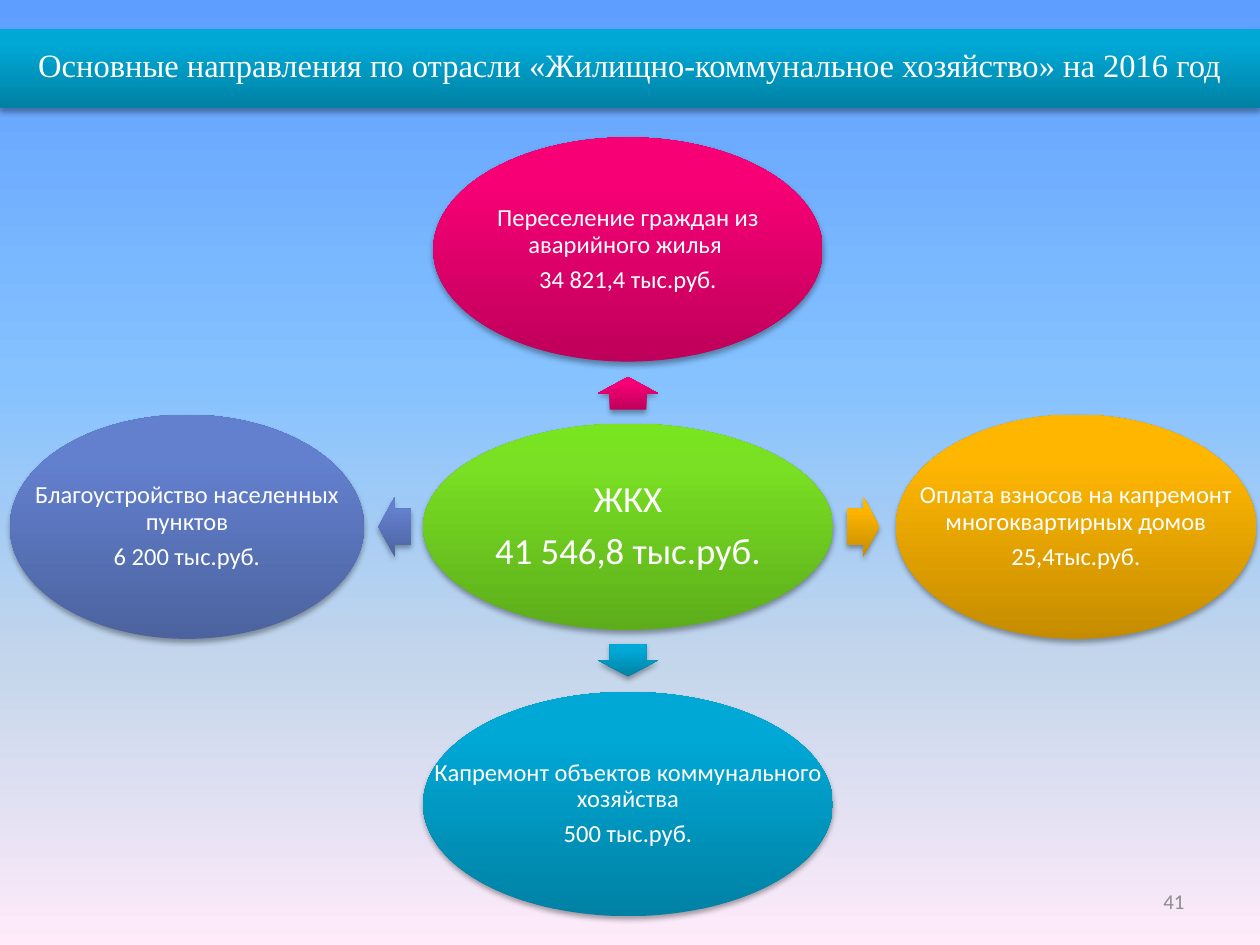
import pptx
import pptx.util
import pptx.dml.color
import pptx.enum.shapes
import pptx.enum.text
import pptx.oxml
import pptx.oxml.ns

Cm, Pt = pptx.util.Cm, pptx.util.Pt
SHAPE = pptx.enum.shapes.MSO_SHAPE
ALIGN = pptx.enum.text.PP_ALIGN
qn, nsdecls = pptx.oxml.ns.qn, pptx.oxml.ns.nsdecls

COLORS = {"white": "FFFFFF", "number": "8C8C8C"}
GRADIENTS = {
    "sky": [(0, "5E9EFF"), (40, "85C2FF"), (70, "C4D6EB"), (100, "FFEBFA")],
    "green": [(0, "5DAD1B"), (80, "79E023"), (100, "79E520")],
    "pink": [(0, "BE005A"), (80, "F70075"), (100, "F80076")],
    "amber": [(0, "C58C00"), (80, "FFB601"), (100, "FFB602")],
    "teal": [(0, "0081A4"), (80, "00A8D5"), (100, "00A8D6")],
    "indigo": [(0, "4C639F"), (80, "6380CE"), (100, "6180D1")],
}
SLIDE_W, SLIDE_H = 25.4, 19.05
HUB_X, HUB_Y = 12.66, 10.62

# text, gradient, ellipse width, centre offset, arrow offset, arrow rotation
BRANCHES = [
    (["Переселение граждан из аварийного жилья ", "34 821,4 тыс.руб."],
     "pink", 7.85, (0, -5.59), (0, -2.69), 270),
    (["Оплата взносов на капремонт многоквартирных домов", "25,4тыс.руб."],
     "amber", 7.26, (9.03, 0), (4.74, 0), 0),
    (["Капремонт объектов коммунального хозяйства", "500 тыс.руб."],
     "teal", 8.26, (0, 5.59), (0, 2.69), 90),
    (["Благоустройство населенных пунктов", "6 200 тыс.руб."],
     "indigo", 7.14, (-8.89, 0), (-4.7, 0), 180),
]


class Deck:
    def __init__(self):
        self.prs = pptx.Presentation()
        self.prs.slide_width, self.prs.slide_height = Cm(SLIDE_W), Cm(SLIDE_H)
        self.s = self.prs.slides.add_slide(self.prs.slide_layouts[6])

    def gradient(self, holder, name, angle):
        """Replace the solid fill inside holder with a named linear gradient."""
        stops = "".join(f'<a:gs pos="{pos * 1000}"><a:srgbClr val="{color}"/></a:gs>'
                        for pos, color in GRADIENTS[name])
        grad = pptx.oxml.parse_xml(
            f'<a:gradFill {nsdecls("a")} rotWithShape="0"><a:gsLst>{stops}</a:gsLst>'
            f'<a:lin ang="{angle * 60000}" scaled="0"/></a:gradFill>')
        solid = holder.find(qn("a:solidFill"))
        holder.replace(solid, grad)

    def background(self, name):
        self.s.background.fill.solid()
        self.gradient(self.s.element.find(".//" + qn("p:bgPr")), name, 90)

    def shape(self, kind, x, y, w, h, name, rotation=0):
        """Add a shaded shape centred on x, y."""
        sp = self.s.shapes.add_shape(kind, Cm(x - w / 2), Cm(y - h / 2), Cm(w), Cm(h))
        sp.rotation = rotation
        sp.line.fill.background()
        sp.fill.solid()
        sp_pr = sp.element.spPr
        self.gradient(sp_pr, name, 270)
        sp.shadow.inherit = False
        sp_pr.find(qn("a:effectLst")).append(pptx.oxml.parse_xml(
            f'<a:outerShdw {nsdecls("a")} blurRad="40000" dist="23000" dir="5400000" '
            'rotWithShape="0"><a:srgbClr val="000000"><a:alpha val="35000"/>'
            '</a:srgbClr></a:outerShdw>'))
        return sp

    def set_text(self, sp, lines, size, font="Calibri", color="white", inset=None, **para):
        tf = sp.text_frame
        frame = {"word_wrap": True, "vertical_anchor": pptx.enum.text.MSO_ANCHOR.MIDDLE}
        if inset is not None:
            sides = ("left", "top", "right", "bottom")
            frame.update({f"margin_{side}": Cm(inset) for side in sides})
        for key, value in frame.items():
            setattr(tf, key, value)
        for i, line in enumerate(lines):
            p = tf.add_paragraph() if i else tf.paragraphs[0]
            for key, value in {"alignment": ALIGN.CENTER, **para}.items():
                setattr(p, key, value)
            r = p.add_run()
            r.text = line
            for key, value in {"size": Pt(size), "name": font}.items():
                setattr(r.font, key, value)
            r.font.color.rgb = pptx.dml.color.RGBColor.from_string(COLORS[color])

    def textbox(self, x, y, w, h, lines, size, **style):
        """Add a text box centred on x, y."""
        sp = self.s.shapes.add_textbox(Cm(x - w / 2), Cm(y - h / 2), Cm(w), Cm(h))
        self.set_text(sp, lines, size, **style)

    def bubble(self, x, y, w, h, lines, size, name, inset):
        """Add an ellipse whose text may use the full width of its frame."""
        self.shape(SHAPE.OVAL, x, y, w, h, name)
        self.textbox(x, y, w, h, lines, size, inset=inset,
                     line_spacing=0.9, space_after=Pt(0.35 * size))

    def arrow(self, x, y, name, rotation):
        sp = self.shape(SHAPE.RIGHT_ARROW, x, y, 0.66, 1.22, name, rotation)
        sp.adjustments[0], sp.adjustments[1] = 0.6, 0.5


def main():
    deck = Deck()
    deck.background("sky")
    deck.textbox(21.17, 18.16, 5.92, 1.02, ["41"], 12,
                 color="number", alignment=ALIGN.RIGHT)
    title = deck.shape(SHAPE.RECTANGLE, SLIDE_W / 2, 1.38, SLIDE_W, 1.6, "teal")
    deck.set_text(title, ["Основные направления по отрасли «Жилищно-коммунальное "
                          "хозяйство» на 2016 год"], 18.6,
                  font="Times New Roman", line_spacing=0.8)
    deck.bubble(HUB_X, HUB_Y, 8.26, 4.16, ["ЖКХ", "41 546,8 тыс.руб."],
                21, "green", 0.07)
    for lines, name, width, (dx, dy), (ax, ay), rotation in BRANCHES:
        deck.arrow(HUB_X + ax, HUB_Y + ay, name, rotation)
        deck.bubble(HUB_X + dx, HUB_Y + dy, width, 4.52, lines, 14, name, 0.05)
    deck.prs.save("out.pptx")


if __name__ == "__main__":
    main()
